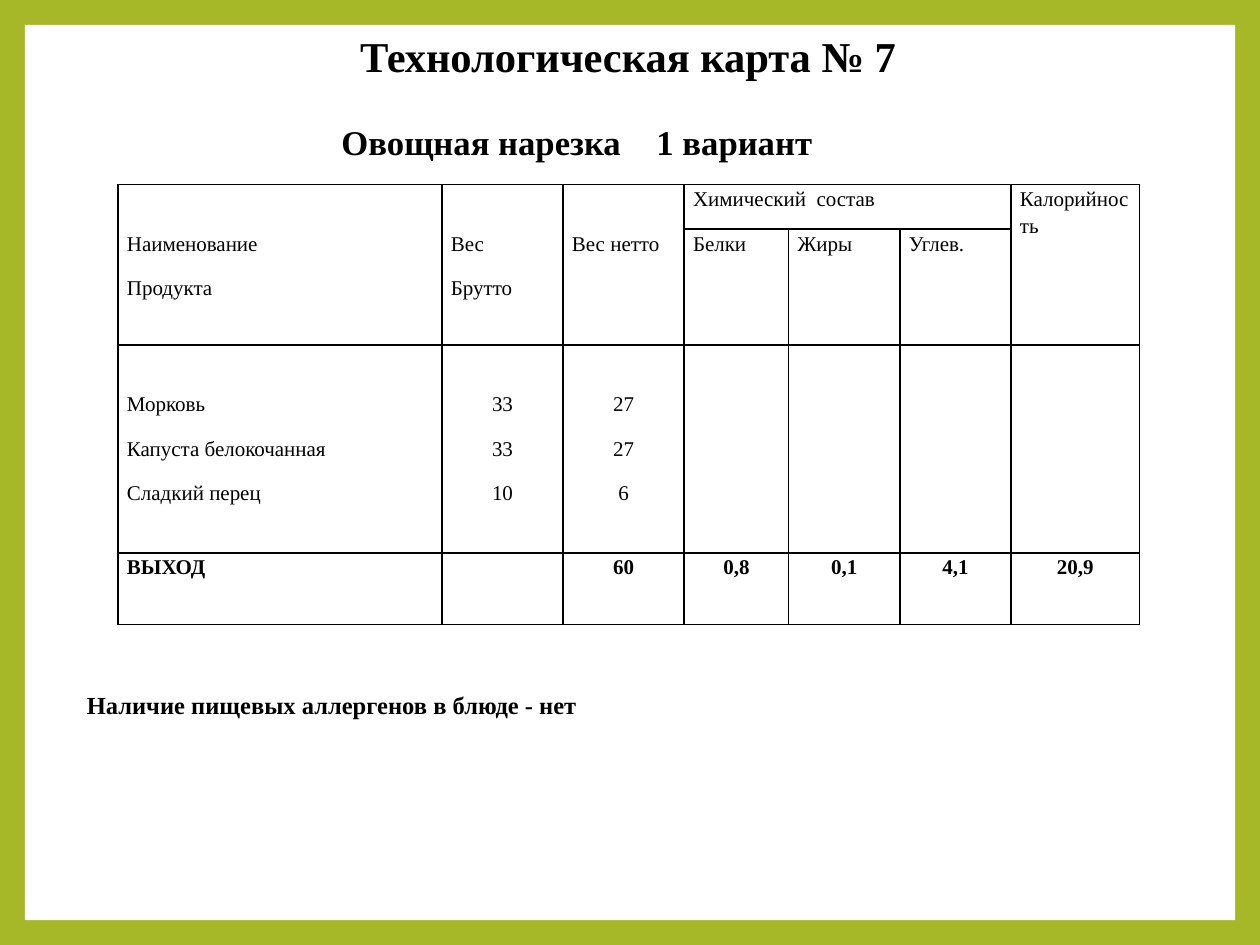
from dataclasses import dataclass

from lxml.etree import SubElement
from pptx import Presentation
from pptx.dml.color import RGBColor
from pptx.enum.shapes import MSO_SHAPE as Shape
from pptx.enum.text import MSO_ANCHOR as Anchor, PP_ALIGN as Align
from pptx.oxml.ns import qn
from pptx.util import Cm, Pt


@dataclass(frozen=True)
class Theme:
    font: str = "Times New Roman"
    ink: RGBColor = RGBColor(0, 0, 0)
    paper: RGBColor = RGBColor(0xFF, 0xFF, 0xFF)
    frame: RGBColor = RGBColor(0xA6, 0xB7, 0x27)
    title: float = 24.3
    dish: float = 19.8
    body: float = 12
    note: float = 14


THEME = Theme()
COLUMNS = (6.53, 2.44, 2.44, 2.11, 2.24, 2.24, 2.59)
ROWS = (0.9, 2.32, 4.19, 1.45)
LINE = 0.9  # one table line with its spacing, cm

# (row, column): lines of the cell
HEADINGS = {
    (0, 3): ["Химический  состав"],
    (0, 6): ["Калорийность"],
    (1, 3): ["Белки"],
    (1, 4): ["Жиры"],
    (1, 5): ["Углев."],
}
LOWERED_HEADINGS = {
    (0, 0): ["Наименование", "Продукта"],
    (0, 1): ["Вес", "Брутто"],
    (0, 2): ["Вес нетто"],
}
PRODUCTS = {
    (2, 0): ["Морковь", "Капуста белокочанная", "Сладкий перец"],
    (2, 1): ["33", "33", "10"],
    (2, 2): ["27", "27", "6"],
}
TOTALS = {
    (3, 0): ["ВЫХОД"],
    (3, 2): ["60"],
    (3, 3): ["0,8"],
    (3, 4): ["0,1"],
    (3, 5): ["4,1"],
    (3, 6): ["20,9"],
}
MERGES = [((0, c), (1, c)) for c in (0, 1, 2, 6)] + [((0, 3), (0, 5))]


def write(paragraph, text, *, size, bold=False, align=Align.LEFT, after=10):
    paragraph.alignment = align
    paragraph.line_spacing = 1.15
    paragraph.space_before = Pt(0)
    paragraph.space_after = Pt(after)
    run = paragraph.add_run()
    run.text = text
    font = run.font
    font.name, font.size, font.bold = THEME.font, Pt(size), bold
    font.color.rgb = THEME.ink


def add_frame(slide, left, top, width, height):
    """Paint the green border around a white panel placed behind everything."""
    backdrop = slide.background.fill
    backdrop.solid()
    backdrop.fore_color.rgb = THEME.frame
    panel = slide.shapes.add_shape(
        Shape.RECTANGLE, Cm(left), Cm(top), Cm(width), Cm(height))
    panel.shadow.inherit = False
    panel.fill.solid()
    panel.fill.fore_color.rgb = THEME.paper
    panel.line.fill.background()
    slide.shapes._spTree.insert(2, panel._element)


def add_heading(slide, left, top, width, height):
    title = slide.shapes.title
    title.left, title.top = Cm(left), Cm(top)
    title.width, title.height = Cm(width), Cm(height)
    frame = title.text_frame
    frame.word_wrap = True
    frame.vertical_anchor = Anchor.TOP
    write(frame.paragraphs[0], "Технологическая карта № 7",
          size=THEME.title, bold=True, align=Align.CENTER, after=19)
    dish = frame.add_paragraph()
    write(dish, "Овощная нарезка\t1 вариант", size=THEME.dish, bold=True, after=0)
    properties = dish._p.get_or_add_pPr()
    properties.set("marL", str(Cm(4.25)))
    properties.set("indent", "0")
    stops = SubElement(properties, qn("a:tabLst"))
    SubElement(stops, qn("a:tab"), pos=str(Cm(10.76)), algn="l")


def style_cell(cell):
    cell.margin_left = cell.margin_right = Cm(0.18)
    cell.margin_top = cell.margin_bottom = Cm(0)
    properties = cell._tc.get_or_add_tcPr()
    for side in ("lnL", "lnR", "lnT", "lnB"):
        border = SubElement(properties, qn(f"a:{side}"), w=str(Pt(1)))
        fill = SubElement(border, qn("a:solidFill"))
        SubElement(fill, qn("a:srgbClr"), val=str(THEME.ink))
    cell.fill.background()


def fill_cells(table, contents, *, lowered=False, bold=False, centre=False):
    """Write cells; centre applies to every column after the first."""
    for (row, column), lines in contents.items():
        cell = table.cell(row, column)
        if lowered:
            cell.margin_top = Cm(LINE)
        align = Align.CENTER if centre and column else Align.LEFT
        frame = cell.text_frame
        for index, line in enumerate(lines):
            paragraph = frame.add_paragraph() if index else frame.paragraphs[0]
            write(paragraph, line, size=THEME.body, bold=bold, align=align)


def add_recipe(slide, left, top):
    table = slide.shapes.add_table(
        len(ROWS), len(COLUMNS), Cm(left), Cm(top),
        Cm(sum(COLUMNS)), Cm(sum(ROWS))).table
    table.first_row = table.horz_banding = False
    for column, width in zip(table.columns, COLUMNS):
        column.width = Cm(width)
    for row, height in zip(table.rows, ROWS):
        row.height = Cm(height)
    for cell in table.iter_cells():
        style_cell(cell)
    for first, last in MERGES:
        table.cell(*first).merge(table.cell(*last))
    fill_cells(table, HEADINGS)
    fill_cells(table, LOWERED_HEADINGS, lowered=True)
    fill_cells(table, PRODUCTS, lowered=True, centre=True)
    fill_cells(table, TOTALS, bold=True, centre=True)


def add_allergen_note(slide, left, top, width, height):
    frame = slide.shapes.add_textbox(
        Cm(left), Cm(top), Cm(width), Cm(height)).text_frame
    frame.word_wrap = True
    frame.margin_top = Cm(0.9)
    write(frame.paragraphs[0], "Наличие пищевых аллергенов в блюде - нет",
          size=THEME.note, bold=True, after=0)


def main():
    deck = Presentation()
    deck.slide_width, deck.slide_height = Cm(25.4), Cm(19.05)
    slide = deck.slides.add_slide(deck.slide_layouts[5])
    add_frame(slide, 0.5, 0.5, 24.4, 18.05)
    add_heading(slide, 2.38, 0.33, 20.57, 3.4)
    add_recipe(slide, 2.38, 3.72)
    add_allergen_note(slide, 1.5, 12.93, 12.6, 1.8)
    deck.save("out.pptx")


if __name__ == "__main__":
    main()
